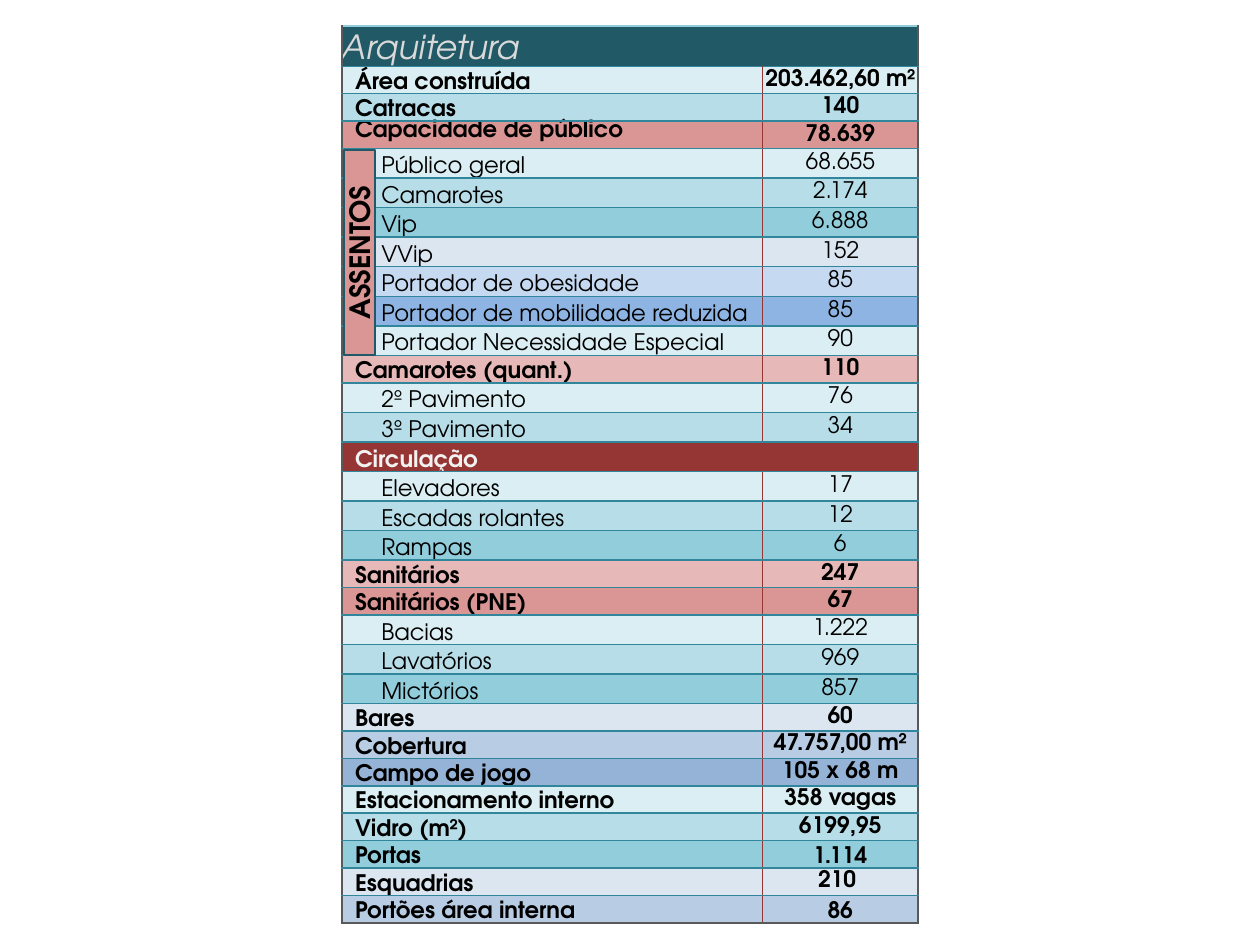
from lxml.etree import SubElement
from pptx import Presentation
from pptx.dml.color import RGBColor
from pptx.enum.shapes import MSO_SHAPE
from pptx.enum.text import MSO_ANCHOR, PP_ALIGN
from pptx.oxml.ns import qn
from pptx.util import Pt

FONT = "TeX Gyre Adventor"
COLORS = {
    "title": "215967", "title_text": "D9D9D9", "title_edge": "92CDDC",
    "section": "963634", "section_text": "F2F2F2", "text": "000000",
    "aqua1": "DAEEF3", "aqua2": "B7DEE8", "aqua3": "92CDDC",
    "rose1": "E6B8B7", "rose2": "DA9694",
    "mist": "DCE6F1", "steel1": "B8CCE4", "steel2": "95B3D7",
    "sky1": "C5D9F1", "sky2": "8DB4E2",
    "frame": "595959", "rule": "31869B", "divider": "963634",
    "tag": "D99694", "tag_line": "215968",
}
TITLE_H, MAIN_H, SUB_H = 22.9, 15.66, 16.9
FRAME = ("frame", 1.5)
RULE = ("rule", 1)
DIVIDER = ("divider", 0.5)
ROWS = [
    ("main", "Área construída", "203.462,60 m²", "aqua1"),
    ("main", "Catracas", "140", "aqua2"),
    ("main", "Capacidade de público", "78.639", "rose2"),
    ("sub", "Público geral", "68.655", "aqua1"),
    ("sub", "Camarotes", "2.174", "aqua2"),
    ("sub", "Vip", "6.888", "aqua3"),
    ("sub", "VVip", "152", "mist"),
    ("sub", "Portador de obesidade", "85", "sky1"),
    ("sub", "Portador de mobilidade reduzida", "85", "sky2"),
    ("sub", "Portador Necessidade Especial", "90", "aqua1"),
    ("main", "Camarotes (quant.)", "110", "rose1"),
    ("sub", "2º Pavimento", "76", "aqua1"),
    ("sub", "3º Pavimento", "34", "aqua2"),
    ("section", "Circulação", "", "section"),
    ("sub", "Elevadores", "17", "aqua1"),
    ("sub", "Escadas rolantes", "12", "aqua2"),
    ("sub", "Rampas", "6", "aqua3"),
    ("main", "Sanitários", "247", "rose1"),
    ("main", "Sanitários (PNE)", "67", "rose2"),
    ("sub", "Bacias", "1.222", "aqua1"),
    ("sub", "Lavatórios", "969", "aqua2"),
    ("sub", "Mictórios", "857", "aqua3"),
    ("main", "Bares", "60", "mist"),
    ("main", "Cobertura", "47.757,00 m²", "steel1"),
    ("main", "Campo de jogo", "105 x 68 m", "steel2"),
    ("main", "Estacionamento interno", "358 vagas", "aqua1"),
    ("main", "Vidro (m²)", "6199,95", "aqua2"),
    ("main", "Portas", "1.114", "aqua3"),
    ("main", "Esquadrias", "210 ", "mist"),
    ("main", "Portões área interna", "86", "steel1"),
]


def rgb(name):
    """Return the named colour."""
    return RGBColor.from_string(COLORS[name])


def style_text(p, size, color, bold=False, italic=False):
    """Format every run of a paragraph, or its end mark when it is empty."""
    for r in p.runs:
        r.font.name, r.font.size = FONT, Pt(size)
        r.font.bold, r.font.italic = bold, italic
        r.font.color.rgb = rgb(color)
    if not p.runs:
        SubElement(p._p, qn("a:endParaRPr"), sz=str(size * 100))


def style_cell(cell, fill, borders, indent=0, anchor=MSO_ANCHOR.BOTTOM):
    """Set a cell's left, right, top and bottom borders, fill and margins."""
    tcPr = cell._tc.get_or_add_tcPr()
    for side, (color, width) in zip("LRTB", borders):
        ln = SubElement(tcPr, qn(f"a:ln{side}"), w=str(Pt(width)))
        SubElement(SubElement(ln, qn("a:solidFill")), qn("a:srgbClr"), val=COLORS[color])
    cell.fill.solid()
    cell.fill.fore_color.rgb = rgb(fill)
    cell.margin_left = Pt(indent)
    cell.margin_right = cell.margin_top = cell.margin_bottom = 0
    cell.vertical_anchor = anchor


def row_height(kind):
    """Return the height of a row of the given kind."""
    return MAIN_H if kind == "main" else SUB_H


def add_data_row(tbl, i, kind, label, value, fill):
    """Fill one label and value row of the table."""
    tbl.rows[i].height = Pt(row_height(kind))
    bottom = FRAME if i == len(ROWS) else RULE
    label_anchor = MSO_ANCHOR.TOP if label == "Capacidade de público" else MSO_ANCHOR.BOTTOM
    value_anchor = MSO_ANCHOR.BOTTOM if label in ("Portas", "Portões área interna") else MSO_ANCHOR.MIDDLE
    name, number = tbl.cell(i, 0), tbl.cell(i, 1)
    style_cell(name, fill, (FRAME, DIVIDER, RULE, bottom), 22.5 if kind == "sub" else 7.5, label_anchor)
    style_cell(number, fill, (DIVIDER, FRAME, RULE, bottom), 0, value_anchor)
    color = "section_text" if kind == "section" else "text"
    for cell, text in ((name, label), (number, value)):
        p = cell.text_frame.paragraphs[0]
        if text:
            p.text = text
        style_text(p, 13, color, bold=kind != "sub")
    number.text_frame.paragraphs[0].alignment = PP_ALIGN.CENTER


def add_data_table(s, x, y, w, h):
    """Place the architecture table in its box."""
    tbl = s.shapes.add_table(len(ROWS) + 1, 2, Pt(x), Pt(y), Pt(w), Pt(h)).table
    tbl.columns[0].width, tbl.columns[1].width = Pt(w - 88.5), Pt(88.5)
    tbl.rows[0].height = Pt(TITLE_H)
    title = tbl.cell(0, 0)
    title.merge(tbl.cell(0, 1))
    for cell in tbl.rows[0].cells:
        style_cell(cell, "title", (FRAME, FRAME, ("title_edge", 1), RULE))
    title.text_frame.text = "Arquitetura"
    style_text(title.text_frame.paragraphs[0], 19, "title_text", italic=True)
    for i, row in enumerate(ROWS, 1):
        add_data_row(tbl, i, *row)


def add_seats_tag(s, x, y, w, h):
    """Place the upright seats label in its box."""
    sp = s.shapes.add_shape(MSO_SHAPE.RECTANGLE, Pt(x + (w - h) / 2), Pt(y + (h - w) / 2), Pt(h), Pt(w))
    sp.rotation = 270
    sp.shadow.inherit = False
    sp.fill.solid()
    sp.fill.fore_color.rgb = rgb("tag")
    sp.line.color.rgb = rgb("tag_line")
    sp.line.width = Pt(1)
    tf = sp.text_frame
    tf.text = "ASSENTOS"
    tf.vertical_anchor = MSO_ANCHOR.MIDDLE
    tf.paragraphs[0].alignment = PP_ALIGN.CENTER
    style_text(tf.paragraphs[0], 16, "text", bold=True)


def main():
    """Build and save the slide."""
    prs = Presentation()
    prs.slide_width, prs.slide_height = Pt(720), Pt(540)
    s = prs.slides.add_slide(prs.slide_layouts[6])
    x, y = 195.4, 15
    table_h = TITLE_H + sum(row_height(row[0]) for row in ROWS)
    add_data_table(s, x, y, 329, table_h)
    add_seats_tag(s, x + 1, y + TITLE_H + 3 * MAIN_H + 0.7, 18, 117.4)
    prs.save("out.pptx")


if __name__ == "__main__":
    main()
